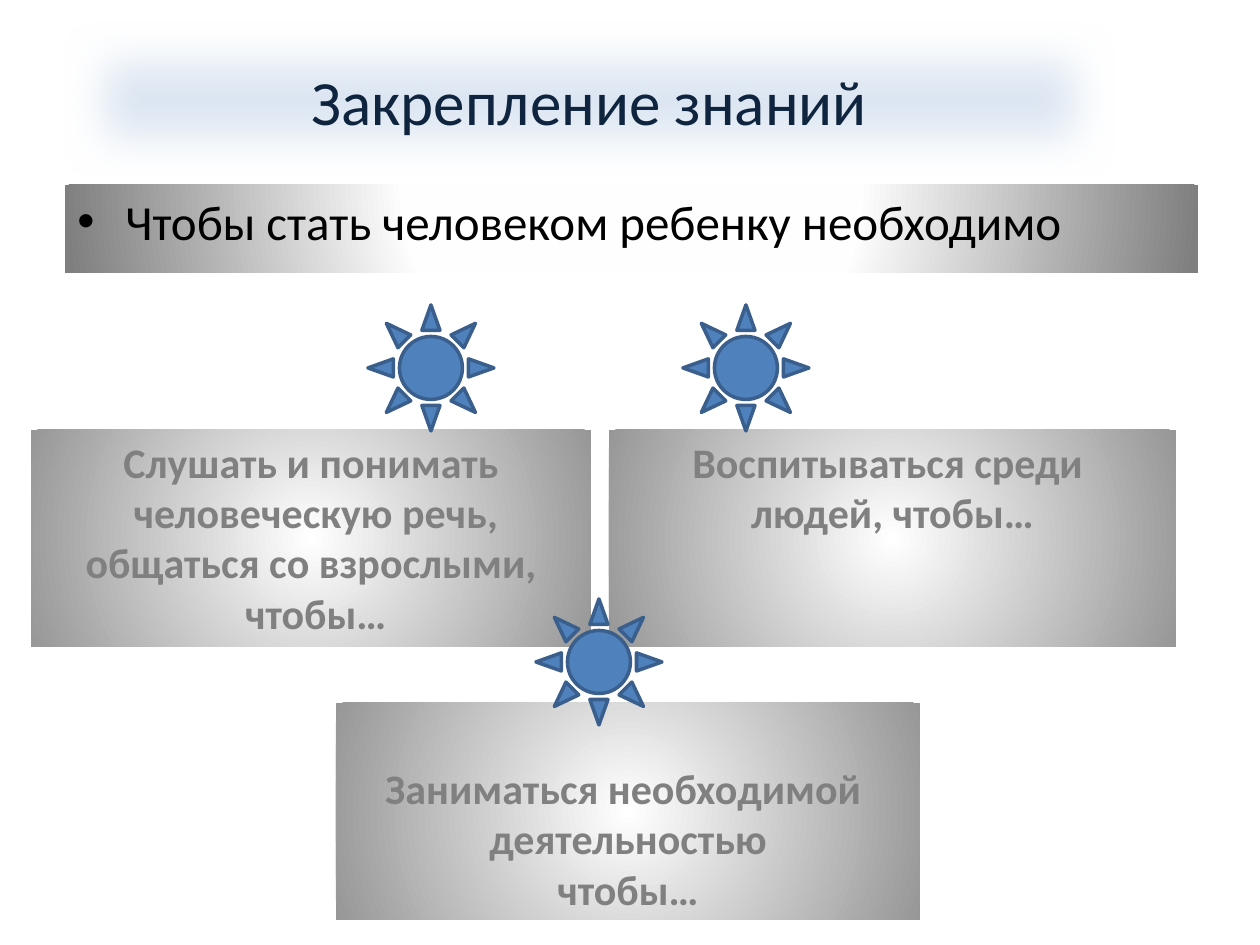
from lxml import etree
from pptx import Presentation
from pptx.dml.color import RGBColor
from pptx.enum.shapes import MSO_SHAPE
from pptx.enum.text import MSO_ANCHOR, PP_ALIGN
from pptx.oxml.ns import qn
from pptx.util import Pt

RECT, SUN = MSO_SHAPE.RECTANGLE, MSO_SHAPE.SUN
TOP, MIDDLE, BOTTOM = MSO_ANCHOR.TOP, MSO_ANCHOR.MIDDLE, MSO_ANCHOR.BOTTOM
LEFT, CENTER = PP_ALIGN.LEFT, PP_ALIGN.CENTER

NAVY = RGBColor(0x0F, 0x24, 0x3E)
PALE = RGBColor(0xDC, 0xE6, 0xF2)
BLACK = RGBColor(0x00, 0x00, 0x00)
GRAY = RGBColor(0x80, 0x80, 0x80)
BLUE = RGBColor(0x4F, 0x81, 0xBD)
EDGE = RGBColor(0x3A, 0x5F, 0x8C)
WHITE = RGBColor(0xFF, 0xFF, 0xFF)
MIST = RGBColor(0xFE, 0xFE, 0xFE)
STEEL = RGBColor(0x97, 0x97, 0x97)
DARK = RGBColor(0x7F, 0x7F, 0x7F)

SCALE = 914400 / 126  # EMU in one px


def emu(px):
    return round(px * SCALE)


def add(parent, tag, **attrs):
    node = etree.SubElement(parent, qn(tag))
    for key, value in attrs.items():
        node.set(key, str(value))
    return node


class Deck:
    font = "Calibri"

    def __init__(self, wide, high):
        self.prs = Presentation()
        self.prs.slide_width, self.prs.slide_height = emu(wide), emu(high)
        self.slide = self.prs.slides.add_slide(self.prs.slide_layouts[5])

    def label(self, shape, lines, size, color, bold=False, align=CENTER,
              anchor=TOP, wrap=True):
        frame = shape.text_frame
        frame.word_wrap, frame.vertical_anchor = wrap, anchor
        for i, line in enumerate(lines):
            para = frame.add_paragraph() if i else frame.paragraphs[0]
            para.alignment = align
            run = para.add_run()
            run.text = line
            font = run.font
            font.name, font.size, font.bold = self.font, Pt(size), bold
            font.color.rgb = color

    def title(self, box, text):
        shape = self.slide.shapes.title
        shape.left, shape.top, shape.width, shape.height = map(emu, box)
        shape.fill.solid()
        shape.fill.fore_color.rgb = PALE
        soft = add(shape.element.spPr, "a:effectLst")
        add(soft, "a:softEdge", rad=Pt(25))
        self.label(shape, [text], 36, NAVY, anchor=MIDDLE)

    def shape(self, kind, box):
        shape = self.slide.shapes.add_shape(kind, *map(emu, box))
        shape.shadow.inherit = False
        return shape

    def glow(self, box, stops, focus):
        """Rectangle with a radial gradient; focus is l, t, r, b in percent."""
        shape = self.shape(RECT, box)
        shape.line.fill.background()
        shape.fill.background()
        blank = shape.element.spPr.find(qn("a:noFill"))
        grad = etree.Element(qn("a:gradFill"), rotWithShape="1")
        marks = add(grad, "a:gsLst")
        for pos, color in stops:
            add(add(marks, "a:gs", pos=pos * 1000), "a:srgbClr", val=color)
        round_fill = add(grad, "a:path", path="circle")
        add(round_fill, "a:fillToRect",
            **{side: part * 1000 for side, part in zip("ltrb", focus)})
        blank.getparent().replace(blank, grad)
        return shape

    def bullet(self, box, text):
        stops = [(0, WHITE), (40, MIST), (100, DARK)]
        shape = self.glow(box, stops, (50, -80, 50, 180))
        self.label(shape, [text], 28, BLACK, align=LEFT)
        props = shape.text_frame.paragraphs[0]._p.get_or_add_pPr()
        props.set("marL", str(emu(48)))
        props.set("indent", str(-emu(48)))
        add(props, "a:buFont", typeface="Arial")
        add(props, "a:buChar", char="•")

    def card(self, box, lines, anchor=TOP, wrap=False):
        shape = self.glow(box, [(0, WHITE), (100, STEEL)], (50, 50, 50, 50))
        self.label(shape, lines, 24, GRAY, bold=True, anchor=anchor, wrap=wrap)

    def sun(self, left, top):
        shape = self.shape(SUN, (left, top, 126, 126))
        shape.fill.solid()
        shape.fill.fore_color.rgb = BLUE
        shape.line.color.rgb = EDGE
        shape.line.width = Pt(2)


def main():
    deck = Deck(1260, 945)

    # Heading and lead line
    deck.title((63, 21, 1053, 158), "Закрепление знаний")
    deck.bullet((65, 185, 1133, 88), "Чтобы стать человеком ребенку необходимо")

    # Conditions
    deck.card((609, 430, 567, 217),
              ["Воспитываться среди ", "людей, чтобы…"], wrap=True)
    deck.card((31, 430, 560, 217),
              ["Слушать и понимать", " человеческую речь,",
               "общаться со взрослыми,", " чтобы…"])
    deck.card((336, 703, 584, 217),
              ["Заниматься необходимой ", "деятельностью", "чтобы…"],
              anchor=BOTTOM)

    # Suns above the conditions
    for left, top in ((368, 305), (683, 305), (536, 599)):
        deck.sun(left, top)

    deck.prs.save("out.pptx")


if __name__ == "__main__":
    main()
